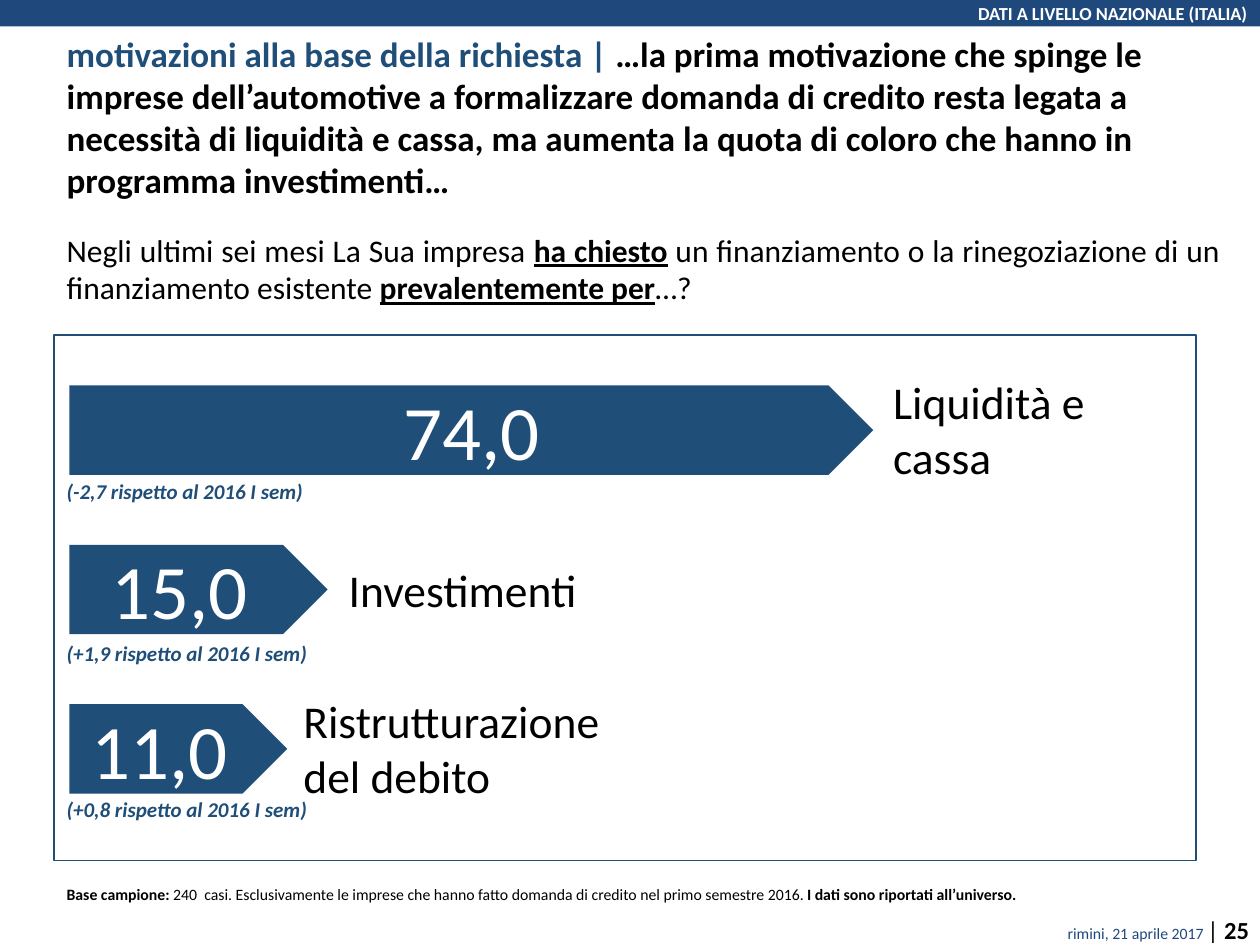
from pptx import Presentation
from pptx import util as u
from pptx.dml import color
from pptx.enum import shapes, text

Pt = u.Pt
BLUE, NAVY, BLACK, WHITE = "1F4E79", "1F497D", "000000", "FFFFFF"
LEFT, CENTER, RIGHT, JUSTIFY = (text.PP_ALIGN.LEFT, text.PP_ALIGN.CENTER,
                                text.PP_ALIGN.RIGHT, text.PP_ALIGN.JUSTIFY)

# Content: runs are (text, size, colour, styles), styles from b, i, u
BANNER = [("DATI A LIVELLO NAZIONALE (ITALIA)", 10.5, WHITE, "b")]
TITLE = [
    ("motivazioni alla base della richiesta | ", 20, BLUE, "b"),
    ("…la prima motivazione che spinge le imprese dell’automotive a formalizzare "
     "domanda di credito resta legata a necessità di liquidità e cassa, ma aumenta "
     "la quota di coloro che hanno in programma investimenti…", 20, BLACK, "b"),
]
QUESTION = [
    ("Negli ultimi sei mesi La Sua impresa ", 18, BLACK, ""),
    ("ha chiesto", 18, BLACK, "bu"),
    (" un finanziamento o la rinegoziazione di un finanziamento esistente ", 18, BLACK, ""),
    ("prevalentemente per", 18, BLACK, "bu"),
    ("…?", 18, BLACK, ""),
]
SAMPLE = [
    ("Base campione: ", 9, BLACK, "b"),
    ("240  casi. Esclusivamente le imprese che hanno fatto domanda di credito "
     "nel primo semestre 2016. ", 9, BLACK, ""),
    ("I dati sono riportati all’universo.", 9, BLACK, "b"),
]
FOOTER = [
    ("rimini, 21 aprile 2017 ", 9, NAVY, ""),
    ("| ", 14, BLACK, ""),
    ("25", 14, BLACK, "b"),
]
# value, arrow width, value centre, label, label left, label width, label lines,
# change, change top
REASONS = [
    ("74,0", 459.4, 269.6, "Liquidità e cassa", 503.3, 162.7, 2, "-2,7", 270),
    ("15,0", 147.6, 102.6, "Investimenti", 192.2, 146.2, 1, "+1,9", 362.2),
    ("11,0", 124.6, 91.1, "Ristrutturazione del debito", 166.3, 218.9, 2, "+0,8", 451.4),
]

# Layout
MARGIN = 31
ARROW_LEFT, ARROW_TOP, ARROW_HEIGHT, ROW_PITCH = 39.6, 220.2, 51.1, 91.1
VALUE_WIDTH, VALUE_HEIGHT = 92.9, 60.5
LABEL_LINE, LABEL_INSETS = 31.7, 7.2


def rgb(hex_code):
    return color.RGBColor.from_string(hex_code)


def write(frame, runs, align):
    paragraph = frame.paragraphs[0]
    paragraph.alignment = align
    for words, size, hex_code, styles in runs:
        run = paragraph.add_run()
        run.text = words
        font = run.font
        font.name, font.size = "Calibri", Pt(size)
        font.bold, font.italic, font.underline = (s in styles for s in "biu")
        font.color.rgb = rgb(hex_code)
    return paragraph


def add_text(slide, box, runs, align=LEFT, wrap=True):
    frame = slide.shapes.add_textbox(*map(Pt, box)).text_frame
    frame.word_wrap = wrap
    return write(frame, runs, align)


def add_block(slide, kind, box, fill=None, line=None):
    block = slide.shapes.add_shape(kind, *map(Pt, box))
    block.shadow.inherit = False
    if fill:
        block.fill.solid()
        block.fill.fore_color.rgb = rgb(fill)
    else:
        block.fill.background()
    if line:
        block.line.color.rgb = rgb(line)
        block.line.width = Pt(1)
    else:
        block.line.fill.background()
    return block


def add_reason(slide, row, reason):
    (value, arrow_width, value_centre, label, label_left, label_width,
     label_lines, change, change_top) = reason
    top = ARROW_TOP + row * ROW_PITCH
    middle = top + ARROW_HEIGHT / 2
    label_height = LABEL_INSETS + label_lines * LABEL_LINE
    add_block(slide, shapes.MSO_SHAPE.PENTAGON,
              (ARROW_LEFT, top, arrow_width, ARROW_HEIGHT), fill=BLUE)
    add_text(slide, (value_centre - VALUE_WIDTH / 2, middle - VALUE_HEIGHT / 2,
                     VALUE_WIDTH, VALUE_HEIGHT),
             [(value, 44, WHITE, "")], CENTER, wrap=False)
    add_text(slide, (label_left, middle - label_height / 2, label_width, label_height),
             [(label, 26, BLACK, "")], wrap=label_lines > 1)
    add_text(slide, (MARGIN, change_top, 216.7, 21.6),
             [(f"({change} rispetto al 2016 I sem)", 12, BLUE, "bi")])


def main():
    deck = Presentation()
    deck.slide_width, deck.slide_height = Pt(720), Pt(540)
    slide = deck.slides.add_slide(deck.slide_layouts[6])

    # Footer, question, title and sample note
    add_text(slide, (221.8, 519.1, 499, 23.8), FOOTER, RIGHT)
    add_text(slide, (MARGIN, 128.2, 673.2, 51.1), QUESTION, JUSTIFY)
    add_text(slide, (MARGIN, 15.1, 682.6, 60.5), TITLE)
    sample = add_text(slide, (MARGIN, 501.1, 683.3, 19.4), SAMPLE, JUSTIFY)
    sample.line_spacing = 1.1

    # Framed arrows
    add_block(slide, shapes.MSO_SHAPE.RECTANGLE, (MARGIN, 191.5, 652.3, 300.2), line=BLUE)
    for row, reason in enumerate(REASONS):
        add_reason(slide, row, reason)

    # Top banner
    banner = add_block(slide, shapes.MSO_SHAPE.RECTANGLE, (0, 0, 720, 15.1), fill=NAVY)
    banner.text_frame.vertical_anchor = text.MSO_ANCHOR.MIDDLE
    write(banner.text_frame, BANNER, RIGHT)

    deck.save("out.pptx")


if __name__ == "__main__":
    main()
